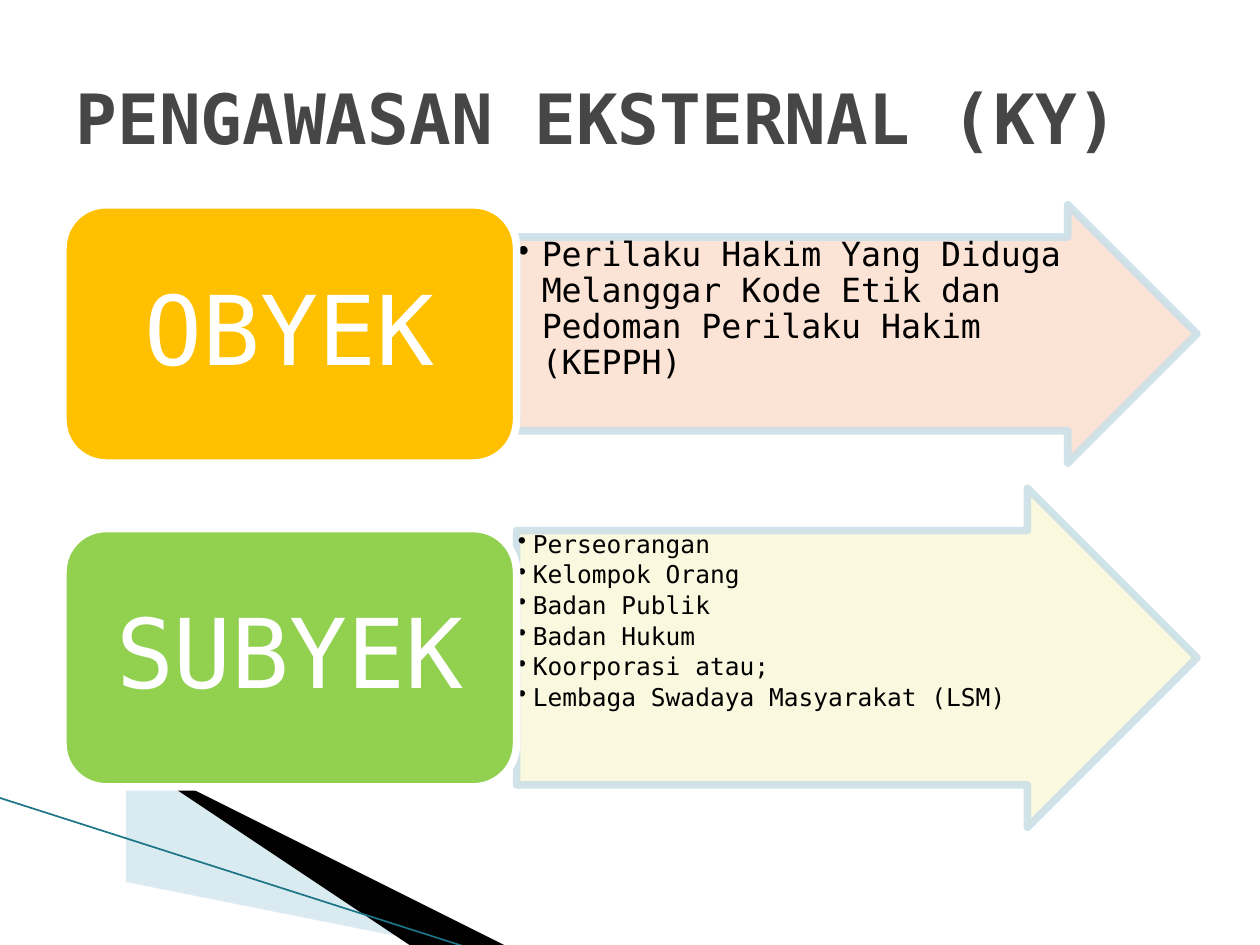
import pptx
import pptx.util
import pptx.dml.color
import pptx.enum.shapes
import pptx.enum.text
import pptx.oxml
import pptx.oxml.ns
from lxml import etree

Inches, Pt = pptx.util.Inches, pptx.util.Pt
RGB = pptx.dml.color.RGBColor
SHAPE = pptx.enum.shapes.MSO_SHAPE
ALIGN = pptx.enum.text.PP_ALIGN
ANCHOR = pptx.enum.text.MSO_ANCHOR
qn = pptx.oxml.ns.qn

FONT = "DejaVu Sans Mono"
BLACK, WHITE = RGB(0, 0, 0), RGB(255, 255, 255)
GREY = RGB(0x46, 0x46, 0x46)
PALE = RGB(0xA0, 0xCB, 0xDC)
TEAL = RGB(0x1B, 0x75, 0x87)
EDGE = RGB(0xCD, 0xE0, 0xE8)
GOLD, GREEN = RGB(0xFF, 0xC0, 0), RGB(0x92, 0xD0, 0x50)
PEACH, CREAM = RGB(0xFB, 0xE0, 0xD1), RGB(0xFA, 0xF9, 0xDF)

LEFT, SPLIT = 0.5, 4.1
BOX_HIGH, ARROW_WIDE = 2.05, 5.4

# label, box colour, row centre, arrow height, arrow colour, opacity, size, indent, items
ROWS = [
    ("OBYEK", GOLD, 2.65, 2.05, PEACH, 90, 19, 0.19,
     ["Perilaku Hakim Yang Diduga Melanggar Kode Etik dan "
      "Pedoman Perilaku Hakim (KEPPH)"]),
    ("SUBYEK", GREEN, 5.22, 2.69, CREAM, 95, 14, 0.12,
     ["Perseorangan", "Kelompok Orang", "Badan Publik", "Badan Hukum",
      "Koorporasi atau;", "Lembaga Swadaya Masyarakat (LSM)"]),
]


def fade(fill, share):
    """Make a solid fill see-through, with share as its opacity in percent."""
    color = fill._xPr.find(qn("a:solidFill"))[0]
    etree.SubElement(color, qn("a:alpha"), val=str(share * 1000))


def paint(shape, color, share=100):
    shape.shadow.inherit = False
    shape.fill.solid()
    shape.fill.fore_color.rgb = color
    if share < 100:
        fade(shape.fill, share)


def style(para, size, color):
    para.font.name = FONT
    para.font.size = Pt(size)
    para.font.color.rgb = color


def add_block(slide, kind, left, mid, wide, high, pad):
    """Add a shape centred on the height mid, with (side, top) text margins."""
    shape = slide.shapes.add_shape(
        kind, Inches(left), Inches(mid - high / 2), Inches(wide), Inches(high))
    shape.line.width = Pt(4.33)
    frame = shape.text_frame
    frame.word_wrap = True
    frame.margin_left = frame.margin_right = Inches(pad[0])
    frame.margin_top = frame.margin_bottom = Inches(pad[1])
    return shape


def add_bullet(para, indent):
    props = para._p.get_or_add_pPr()
    props.set("marL", str(Inches(indent)))
    props.set("indent", str(-Inches(indent)))
    etree.SubElement(props, qn("a:buChar"), char="•")


def add_arrow(slide, mid, high, color, share, size, indent, items):
    arrow = add_block(slide, SHAPE.RIGHT_ARROW, SPLIT, mid, ARROW_WIDE, high,
                      (0.01, 0.01))
    arrow.adjustments[0] = 0.75
    paint(arrow, color, share)
    arrow.line.color.rgb = EDGE
    fade(arrow.line.fill, 90)
    frame = arrow.text_frame
    frame.vertical_anchor = ANCHOR.TOP
    frame.text = "\n".join(items)
    for para in frame.paragraphs:
        para.alignment = ALIGN.LEFT
        para.line_spacing = 0.9
        para.space_after = Pt(round(size * 0.17, 1))
        add_bullet(para, indent)
        style(para, size, BLACK)


def add_label(slide, text, mid, color):
    box = add_block(slide, SHAPE.ROUNDED_RECTANGLE, LEFT, mid, SPLIT - LEFT,
                    BOX_HIGH, (0.23, 0.11))
    paint(box, color)
    box.line.color.rgb = WHITE
    box.text_frame.vertical_anchor = ANCHOR.MIDDLE
    para = box.text_frame.paragraphs[0]
    para.text = text
    para.alignment = ALIGN.CENTER
    para.line_spacing = 0.9
    style(para, 55, WHITE)


def add_wedge(slide, points, color, share=100):
    first, *rest = points
    form = slide.shapes.build_freeform(*first, scale=Inches(1))
    form.add_line_segments(rest, close=True)
    wedge = form.convert_to_shape()
    paint(wedge, color, share)
    wedge.line.fill.background()


def add_swoosh(slide):
    add_wedge(slide, [(0.55, 6.51), (5.95, 7.51), (4.56, 7.51), (0.55, 6.5)],
              PALE, 40)
    add_wedge(slide, [(0.53, 6.49), (4.57, 7.51), (3.72, 7.52), (0.54, 6.5)],
              BLACK)
    line = slide.shapes.add_connector(
        pptx.enum.shapes.MSO_CONNECTOR.STRAIGHT,
        Inches(-0.01), Inches(6.33), Inches(3.71), Inches(7.52))
    line.line.color.rgb = TEAL
    line.line.width = Pt(0.95)
    etree.SubElement(line._element.spPr, qn("a:effectLst"))


def set_title(slide, text):
    title = slide.shapes.title
    title.left, title.top = Inches(LEFT), Inches(0.3)
    title.width, title.height = Inches(9), Inches(1.25)
    title.text_frame.vertical_anchor = ANCHOR.MIDDLE
    para = title.text_frame.paragraphs[0]
    para.text = text
    para.alignment = ALIGN.LEFT
    style(para, 39.6, GREY)
    para.font.bold = True


def main():
    deck = pptx.Presentation()
    deck.slide_width, deck.slide_height = Inches(10), Inches(7.5)
    slide = deck.slides.add_slide(deck.slide_layouts[5])
    add_swoosh(slide)
    set_title(slide, "PENGAWASAN EKSTERNAL (KY)")
    for label, color, mid, *arrow in ROWS:
        add_arrow(slide, mid, *arrow)
        add_label(slide, label, mid, color)
    deck.save("out.pptx")


if __name__ == "__main__":
    main()
